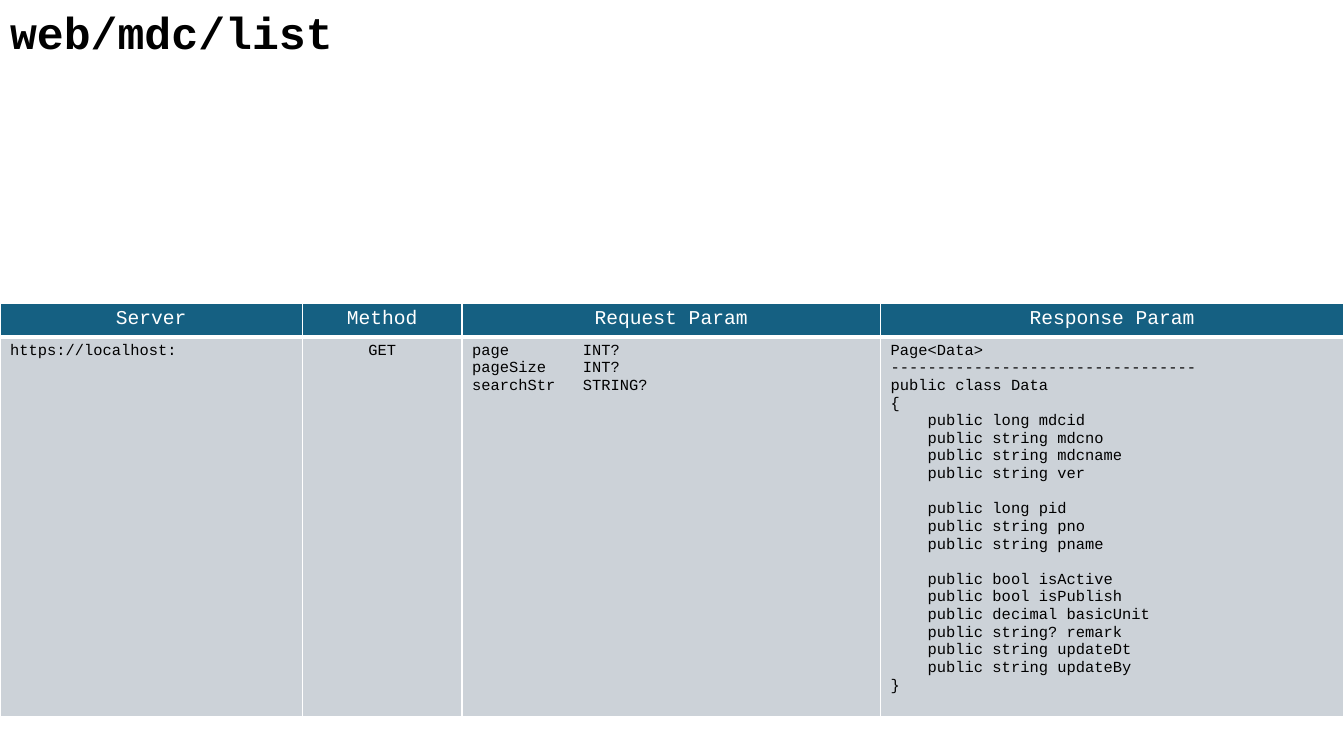
from dataclasses import dataclass

from lxml import etree
from pptx import Presentation
from pptx.dml.color import RGBColor
from pptx.enum.text import MSO_ANCHOR, MSO_AUTO_SIZE, PP_ALIGN
from pptx.oxml.ns import qn
from pptx.util import Pt

LEFT, CENTER = PP_ALIGN.LEFT, PP_ALIGN.CENTER
TOP = MSO_ANCHOR.TOP
FIT_SHAPE = MSO_AUTO_SIZE.SHAPE_TO_FIT_TEXT
TITLE_ONLY = 5


@dataclass(frozen=True)
class Theme:
    font: str = "Courier New"
    title_size: int = 32
    header_size: int = 14
    body_size: int = 11
    ink: str = "000000"
    paper: str = "FFFFFF"
    header_fill: str = "156082"
    body_fill: str = "CCD2D8"


THEME = Theme()
CODE_LINE = Pt(12.5)
TYPE_TAB = Pt(79.2)
COLUMN_WIDTHS = (216, 114, 299, 331)
HEADER_HEIGHT, BODY_HEIGHT = 24, 271
HEADINGS = ("Server", "Method", "Request Param", "Response Param")
SERVER = "https://localhost:"
METHOD = "GET"
REQUEST = """page\tINT?
pageSize\tINT?
searchStr\tSTRING?"""
RESPONSE = """Page<Data>
---------------------------------
public class Data
{
    public long mdcid
    public string mdcno
    public string mdcname
    public string ver

    public long pid
    public string pno
    public string pname

    public bool isActive
    public bool isPublish
    public decimal basicUnit
    public string? remark
    public string updateDt
    public string updateBy
}"""


def format_runs(paragraph, size, color, bold=False):
    for run in paragraph.runs:
        run.font.name = THEME.font
        run.font.size = Pt(size)
        run.font.bold = bold
        run.font.color.rgb = RGBColor.from_string(color)


def add_tab_stop(paragraph, position):
    tabs = etree.SubElement(paragraph._p.get_or_add_pPr(), qn("a:tabLst"))
    etree.SubElement(tabs, qn("a:tab"), pos=str(int(position)), algn="l")


def set_borders(cell, bottom_width):
    properties = cell._tc.get_or_add_tcPr()
    for side, width in (("L", 1), ("R", 1), ("T", 1), ("B", bottom_width)):
        line = etree.SubElement(properties, qn(f"a:ln{side}"), w=str(int(Pt(width))))
        fill = etree.SubElement(line, qn("a:solidFill"))
        etree.SubElement(fill, qn("a:srgbClr"), val=THEME.paper)


def fill_cell(cell, text, size, color, background, align, bottom_width=1):
    """Write one paragraph per line; a blank line becomes space before the next."""
    set_borders(cell, bottom_width)
    cell.fill.solid()
    cell.fill.fore_color.rgb = RGBColor.from_string(background)
    cell.vertical_anchor = TOP
    frame = cell.text_frame
    for block_index, block in enumerate(text.split("\n\n")):
        for line_index, line in enumerate(block.split("\n")):
            is_first = block_index == line_index == 0
            paragraph = frame.paragraphs[0] if is_first else frame.add_paragraph()
            paragraph.text = line
            paragraph.alignment = align
            if block_index and line_index == 0:
                paragraph.space_before = CODE_LINE
            if "\t" in line:
                add_tab_stop(paragraph, TYPE_TAB)
            format_runs(paragraph, size, color)


def add_title(slide, text):
    title = slide.shapes.title
    title.left, title.top, title.width, title.height = Pt(0), Pt(0), Pt(680), Pt(46)
    frame = title.text_frame
    frame.text = text
    frame.word_wrap = True
    frame.auto_size = FIT_SHAPE
    frame.vertical_anchor = TOP
    paragraph = frame.paragraphs[0]
    paragraph.alignment = LEFT
    format_runs(paragraph, THEME.title_size, THEME.ink, bold=True)


def add_endpoint_table(slide):
    endpoint = slide.shapes.add_table(
        2, len(HEADINGS), Pt(0), Pt(216.7),
        Pt(sum(COLUMN_WIDTHS)), Pt(HEADER_HEIGHT + BODY_HEIGHT)).table
    for column, width in zip(endpoint.columns, COLUMN_WIDTHS):
        column.width = Pt(width)
    for row, height in zip(endpoint.rows, (HEADER_HEIGHT, BODY_HEIGHT)):
        row.height = Pt(height)
    details = (SERVER, METHOD, REQUEST, RESPONSE)
    for index, (heading, detail) in enumerate(zip(HEADINGS, details)):
        fill_cell(endpoint.cell(0, index), heading, THEME.header_size, THEME.paper,
                  THEME.header_fill, CENTER, bottom_width=3)
        fill_cell(endpoint.cell(1, index), detail, THEME.body_size, THEME.ink,
                  THEME.body_fill, CENTER if detail == METHOD else LEFT)


def main():
    deck = Presentation()
    deck.slide_width, deck.slide_height = Pt(960), Pt(540)
    slide = deck.slides.add_slide(deck.slide_layouts[TITLE_ONLY])
    add_title(slide, "web/mdc/list")
    add_endpoint_table(slide)
    deck.save("out.pptx")


if __name__ == "__main__":
    main()
